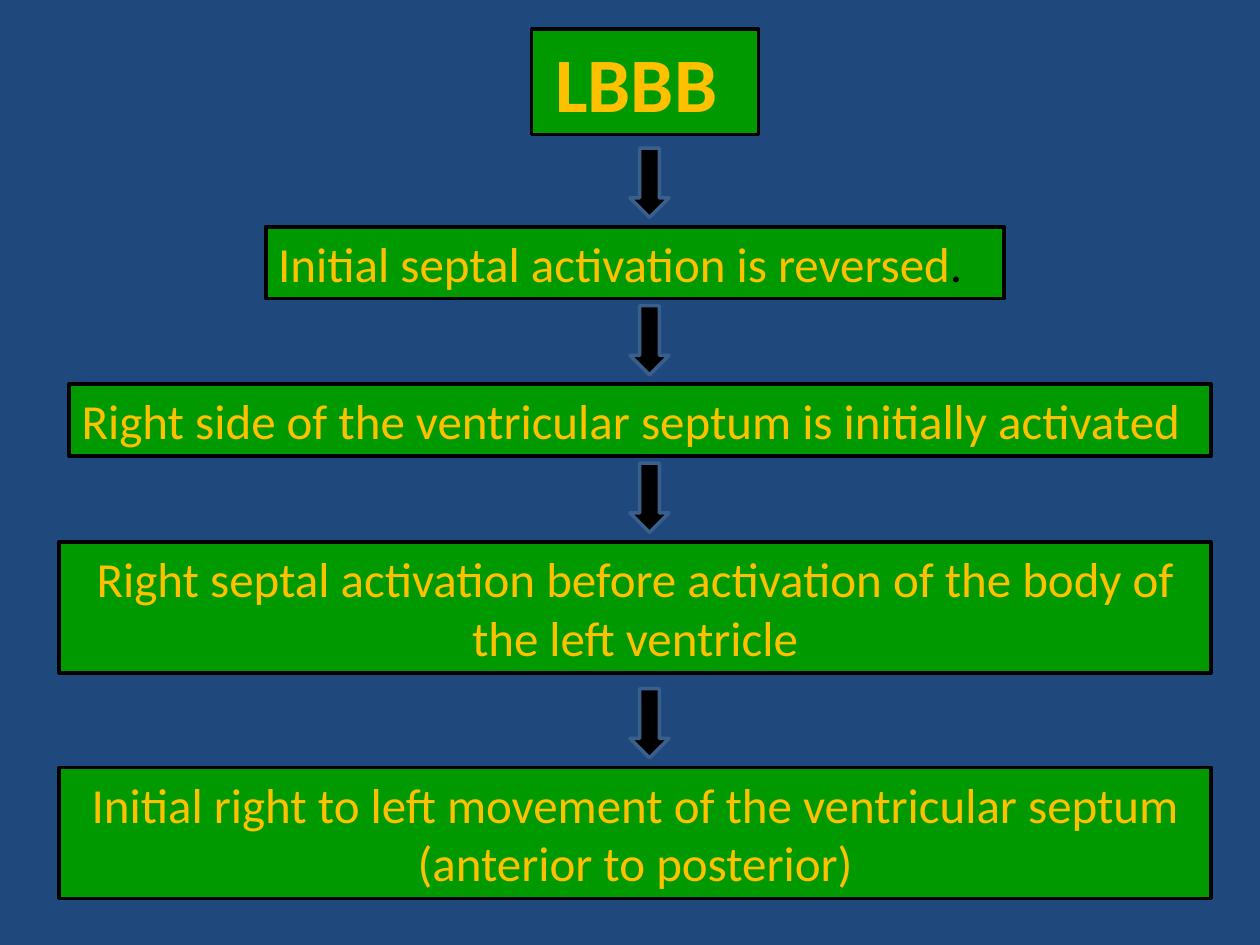
from pptx import Presentation
from pptx.dml.color import RGBColor
from pptx.enum.shapes import MSO_SHAPE
from pptx.enum.text import MSO_AUTO_SIZE, PP_ALIGN
from pptx.util import Inches, Pt

RECTANGLE, DOWN_ARROW = MSO_SHAPE.RECTANGLE, MSO_SHAPE.DOWN_ARROW
LEFT, CENTER = PP_ALIGN.LEFT, PP_ALIGN.CENTER
FIT_SHAPE = MSO_AUTO_SIZE.SHAPE_TO_FIT_TEXT

NAVY = RGBColor(0x1F, 0x49, 0x7D)
GREEN = RGBColor(0x00, 0x99, 0x00)
GOLD = RGBColor(0xFF, 0xC0, 0x00)
BLACK = RGBColor(0x00, 0x00, 0x00)
STEEL = RGBColor(0x3A, 0x5F, 0x8C)

# The grid has 100 columns and 75 rows on a 10 by 7.5 inch slide.
COLUMNS, ROWS = 100, 75
ONE_LINE, TWO_LINES = 5.7, 10.4
ARROW_COLUMN, ARROW_WIDTH, ARROW_HEIGHT = 50, 3.1, 5.5
ARROW_GAP = 0.75  # rows between an arrow's tip and the step below

# left column, top row, width, height, alignment, coloured text spans
STEPS = [
    (21.1, 18, 58.6, ONE_LINE, LEFT,
     [("Initial septal activation is reversed", GOLD), (".", BLACK)]),
    (5.5, 30.5, 90.6, ONE_LINE, LEFT,
     [("Right side of the ventricular septum is initially activated", GOLD)]),
    (4.7, 43, 91.4, TWO_LINES, CENTER,
     [("Right septal activation before activation of the body of "
       "the left ventricle", GOLD)]),
    (4.7, 60.9, 91.4, TWO_LINES, CENTER,
     [("Initial right to left movement of the ventricular septum "
       "(anterior to posterior)", GOLD)]),
]


class FlowPage:
    font_name = "Calibri"
    line_width = Pt(2)

    def __init__(self, deck):
        self.deck = deck
        self.page = deck.slides.add_slide(deck.slide_layouts[6])
        background = self.page.background.fill
        background.solid()
        background.fore_color.rgb = NAVY

    def shape(self, kind, column, row, width, height, fill, line):
        """Add a filled, outlined shape measured in grid columns and rows."""
        x_unit = self.deck.slide_width / COLUMNS
        y_unit = self.deck.slide_height / ROWS
        shape = self.page.shapes.add_shape(
            kind, round(column * x_unit), round(row * y_unit),
            round(width * x_unit), round(height * y_unit))
        shape.shadow.inherit = False
        shape.fill.solid()
        shape.fill.fore_color.rgb = fill
        shape.line.color.rgb = line
        shape.line.width = self.line_width
        return shape

    def text_box(self, column, row, width, height, align, spans,
                 size=28, bold=False):
        box = self.shape(RECTANGLE, column, row, width, height, GREEN, BLACK)
        frame = box.text_frame
        frame.word_wrap = True
        frame.auto_size = FIT_SHAPE
        para = frame.paragraphs[0]
        para.alignment = align
        para.font.name = self.font_name
        para.font.size = Pt(size)
        para.font.bold = bold
        for text, color in spans:
            span = para.add_run()
            span.text = text
            span.font.color.rgb = color

    def arrow_above(self, row):
        """Add the arrow that leads down to a step starting at this row."""
        self.shape(DOWN_ARROW, ARROW_COLUMN, row - ARROW_GAP - ARROW_HEIGHT,
                   ARROW_WIDTH, ARROW_HEIGHT, BLACK, STEEL)


def main():
    deck = Presentation()
    deck.slide_width, deck.slide_height = Inches(10), Inches(7.5)
    flow = FlowPage(deck)
    flow.text_box(42.2, 2.3, 18, 8.4, CENTER, [("LBBB ", GOLD)],
                  size=44, bold=True)
    for step in STEPS:
        flow.text_box(*step)
        flow.arrow_above(step[1])
    deck.save("out.pptx")


if __name__ == "__main__":
    main()
